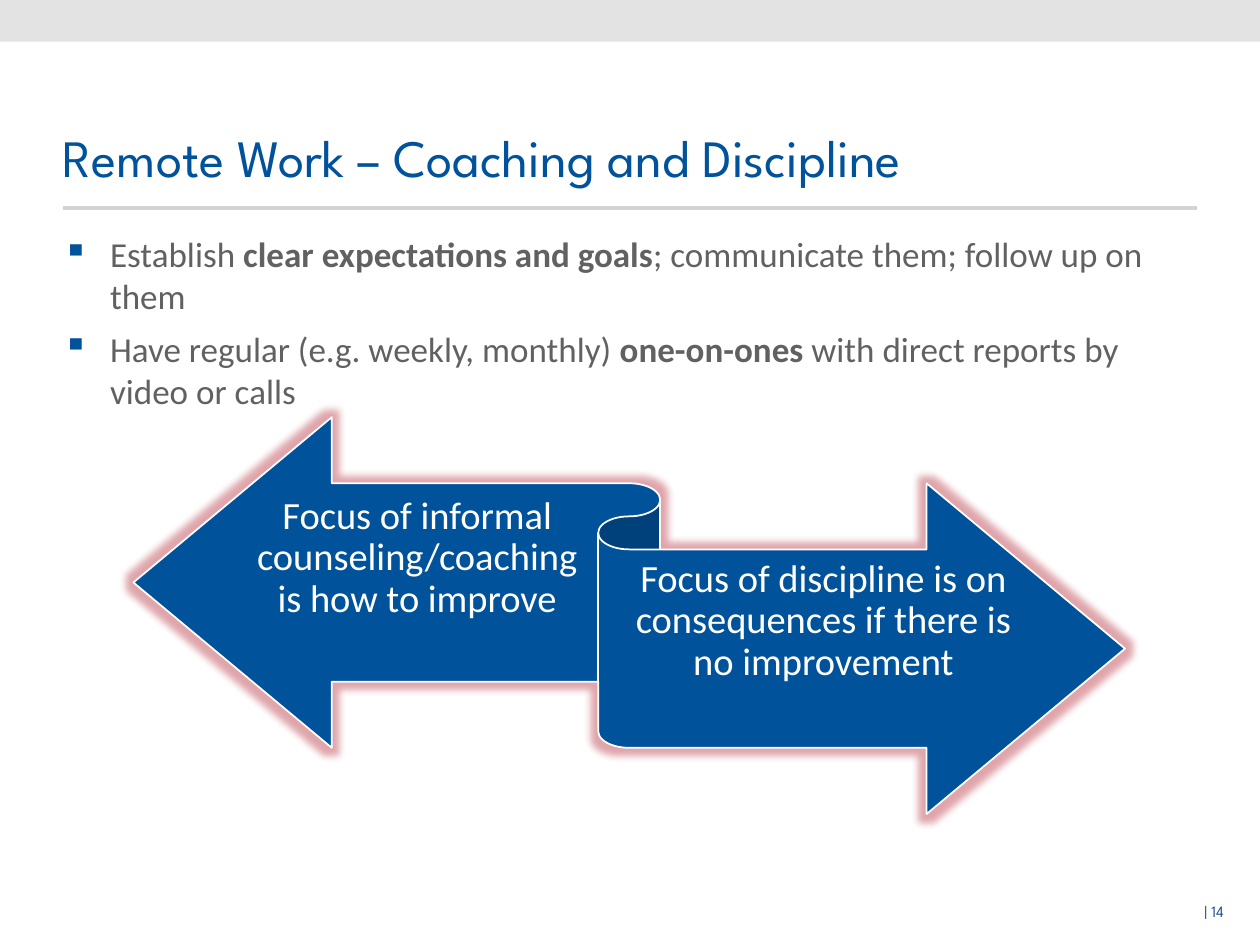
from lxml.etree import SubElement
from pptx import Presentation
from pptx.dml.color import RGBColor
from pptx.enum.shapes import MSO_CONNECTOR, MSO_SHAPE
from pptx.enum.text import MSO_ANCHOR, PP_ALIGN
from pptx.oxml.ns import qn
from pptx.util import Cm, Pt

BLUE, WHITE = "00529B", "FFFFFF"
HEAD, BODY = "League Spartan", "Calibri"

# Each paragraph is a list of (text, bold) runs.
TITLE = [[("Remote Work – Coaching and Discipline", False)]]
POINTS = [
    [("Establish ", False), ("clear expectations and goals", True),
     ("; communicate them; follow up on them", False)],
    [("Have regular (e.g. weekly, monthly) ", False), ("one-on-ones", True),
     (" with direct reports by video or calls", False)],
]
PAGE = [[("| 14", False)]]
ARROWS = [
    ("Focus of informal counseling/coaching is how to improve",
     (5.11, 9.3, 6.6, 3.91)),
    ("Focus of discipline is on consequences if there is no improvement",
     (12.7, 10.57, 7.8, 3.91)),
]


def color(code):
    return RGBColor.from_string(code)


def apply(item, values):
    for name, value in values.items():
        setattr(item, name, value)


def tint(node, code, alpha):
    """Add a colour with an alpha in percent below an XML node."""
    clr = SubElement(node, qn("a:srgbClr"), val=code)
    SubElement(clr, qn("a:alpha"), val=str(alpha * 1000))


def bullet(para, code):
    props = para._p.get_or_add_pPr()
    indent = Cm(0.95)
    props.set("marL", str(indent))
    props.set("indent", str(-indent))
    clr = SubElement(props, qn("a:buClr"))
    SubElement(clr, qn("a:srgbClr"), val=code)
    SubElement(props, qn("a:buChar"), char="▪")


def add_text(slide, box, paras, font, ink, frame={}, form={}, mark=None):
    text = slide.shapes.add_textbox(*map(Cm, box)).text_frame
    apply(text, {"word_wrap": True, "margin_left": 0, "margin_right": 0,
                 **frame})
    for i, runs in enumerate(paras):
        para = text.paragraphs[0] if i == 0 else text.add_paragraph()
        if mark:
            bullet(para, mark)
        apply(para, form)
        for words, bold in runs:
            run = para.add_run()
            run.text = words
            apply(run.font, {**font, "bold": bold})
            run.font.color.rgb = color(ink)


def add_shape(slide, kind, box, fill):
    shape = slide.shapes.add_shape(kind, *map(Cm, box))
    shape.shadow.inherit = False
    shape.fill.solid()
    shape.fill.fore_color.rgb = color(fill)
    return shape


def add_band(slide):
    band = add_shape(slide, MSO_SHAPE.RECTANGLE, (0, 0, 25.4, 0.84), "C5C5C5")
    band.line.fill.background()
    fill = band._element.spPr.find(qn("a:solidFill"))
    fill.remove(fill[0])
    tint(fill, "C5C5C5", 47)


def add_rule(slide):
    rule = slide.shapes.add_connector(
        MSO_CONNECTOR.STRAIGHT, Cm(1.27), Cm(4.19), Cm(24.13), Cm(4.19))
    rule.line.color.rgb = color("D1D3D4")
    rule.line.width = Pt(2.25)
    SubElement(rule._element.spPr, qn("a:effectLst"))


def add_ribbon(slide):
    ribbon = add_shape(slide, MSO_SHAPE.LEFT_RIGHT_RIBBON,
                       (2.69, 8.41, 19.99, 8), BLUE)
    ribbon.line.color.rgb = color(WHITE)
    ribbon.line.width = Pt(1)
    effects = ribbon._element.spPr.find(qn("a:effectLst"))
    glow = SubElement(effects, qn("a:glow"), rad=str(Pt(8)))
    tint(glow, "AF1E2D", 40)


def main():
    deck = Presentation()
    apply(deck, {"slide_width": Cm(25.4), "slide_height": Cm(19.05)})
    slide = deck.slides.add_slide(deck.slide_layouts[6])
    add_band(slide)
    add_rule(slide)
    add_text(slide, (23.42, 18.06, 1.5, 0.79), PAGE,
             {"name": HEAD, "size": Pt(9)}, "245397",
             {"margin_right": Cm(0.25)}, {"alignment": PP_ALIGN.RIGHT})
    add_text(slide, (1.27, 1.14, 22.86, 2.8), TITLE,
             {"name": HEAD, "size": Pt(30)}, BLUE,
             {"vertical_anchor": MSO_ANCHOR.BOTTOM}, {"line_spacing": 0.9})
    add_text(slide, (1.27, 4.57, 22.86, 14.48), POINTS,
             {"name": BODY, "size": Pt(20)}, "616161",
             form={"space_after": Pt(6)}, mark=BLUE)
    add_ribbon(slide)
    for words, box in ARROWS:
        add_text(slide, box, [[(words, False)]],
                 {"name": BODY, "size": Pt(22)}, WHITE,
                 {"vertical_anchor": MSO_ANCHOR.MIDDLE,
                  "margin_top": Cm(0.23), "margin_bottom": Cm(0.23)},
                 {"alignment": PP_ALIGN.CENTER, "line_spacing": 0.9})
    deck.save("out.pptx")


if __name__ == "__main__":
    main()
